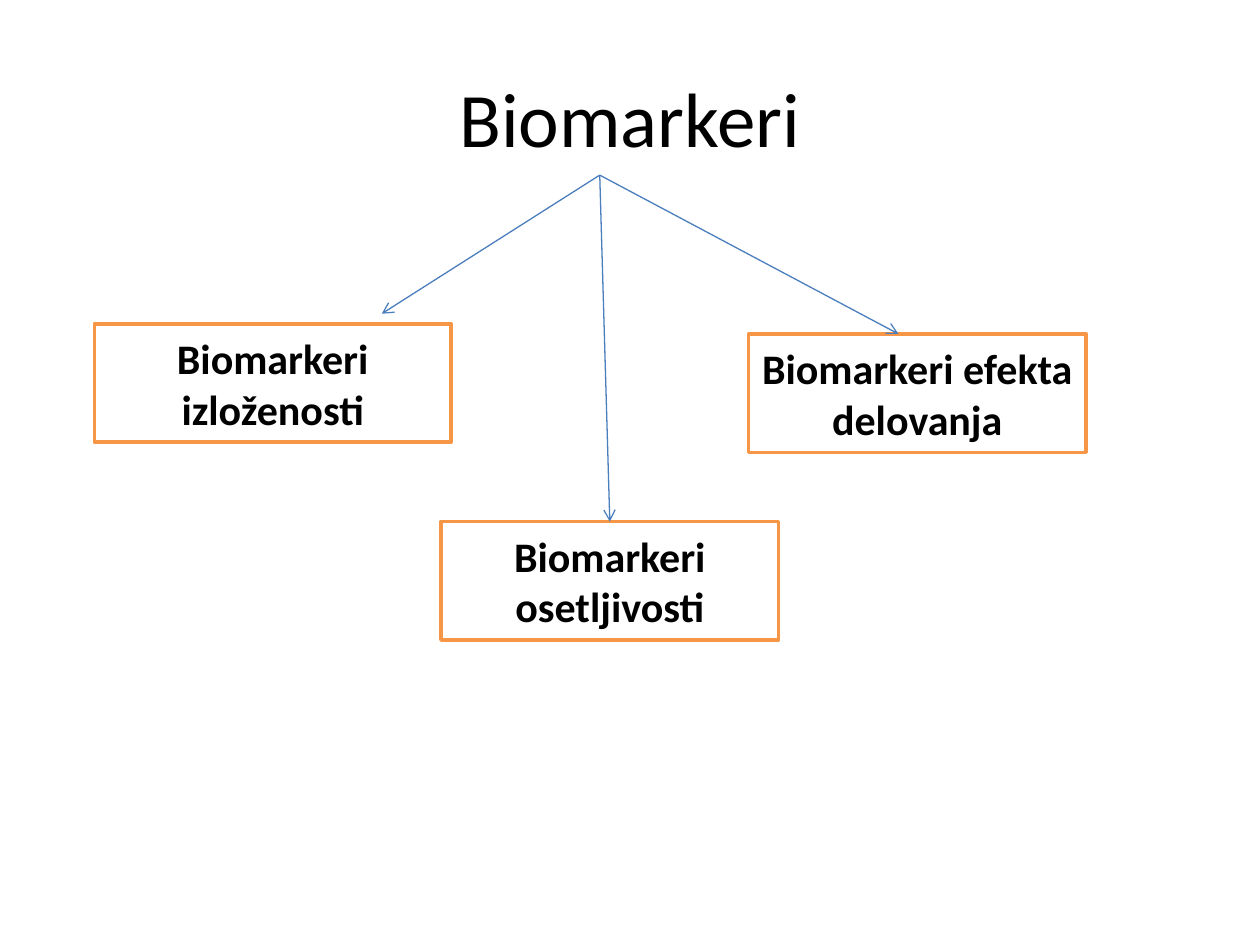
from lxml import etree
from pptx import Presentation
from pptx import util as u
from pptx.dml.color import RGBColor
from pptx.enum import shapes, text
from pptx.oxml.ns import qn

BLACK, WHITE, ORANGE, BLUE = "000000", "FFFFFF", "F79646", "4B7EBC"
ORIGIN = (4.76, 1.39)
BRANCHES = [
    ("Biomarkeri izloženosti", (0.75, 2.57, 2.83, 0.94), (3.03, 2.49)),
    ("Biomarkeri osetljivosti", (3.5, 4.14, 2.68, 0.94), (4.84, 4.14)),
    ("Biomarkeri efekta delovanja", (5.94, 2.65, 2.68, 0.94), (7.13, 2.65)),
]


def color(value):
    """Turn a hex string into a colour."""
    return RGBColor.from_string(value)


def inches(values):
    """Turn numbers into lengths in inches."""
    return [u.Inches(value) for value in values]


def write(shape, words, size, bold=False):
    """Write one centred paragraph in a shape."""
    frame = shape.text_frame
    frame.word_wrap = True
    frame.vertical_anchor = text.MSO_ANCHOR.MIDDLE
    para = frame.paragraphs[0]
    para.alignment = text.PP_ALIGN.CENTER
    span = para.add_run()
    span.text = words
    span.font.name = "Calibri"
    span.font.size = u.Pt(size)
    span.font.bold = bold
    span.font.color.rgb = color(BLACK)


def add_title(page, words, area):
    """Place the slide title in the given area."""
    write(page.shapes.add_textbox(*inches(area)), words, 44)


def add_category(page, words, area):
    """Place an outlined category box in the given area."""
    box = page.shapes.add_shape(shapes.MSO_SHAPE.RECTANGLE, *inches(area))
    box.shadow.inherit = False
    box.fill.solid()
    box.fill.fore_color.rgb = color(WHITE)
    box.line.color.rgb = color(ORANGE)
    box.line.width = u.Pt(2)
    write(box, words, 24, bold=True)


def add_arrow(page, start, end):
    """Draw a thin arrow between two points."""
    arrow = page.shapes.add_connector(
        shapes.MSO_CONNECTOR.STRAIGHT, *inches(start + end))
    arrow.line.color.rgb = color(BLUE)
    arrow.line.width = u.Pt(0.75)
    etree.SubElement(arrow.line._get_or_add_ln(), qn("a:tailEnd"), type="arrow")
    etree.SubElement(arrow._element.spPr, qn("a:effectLst"))


def add_tree(page, origin, branches):
    """Place the category boxes and the arrows leading to them."""
    for words, area, _ in branches:
        add_category(page, words, area)
    for _, _, tip in branches:
        add_arrow(page, origin, tip)


def main():
    """Build the slide and save the deck."""
    deck = Presentation()
    deck.slide_width, deck.slide_height = inches((10, 7.5))
    page = deck.slides.add_slide(deck.slide_layouts[6])
    add_title(page, "Biomarkeri", (0.5, 0.3, 9, 1.25))
    add_tree(page, ORIGIN, BRANCHES)
    deck.save("out.pptx")


if __name__ == "__main__":
    main()
